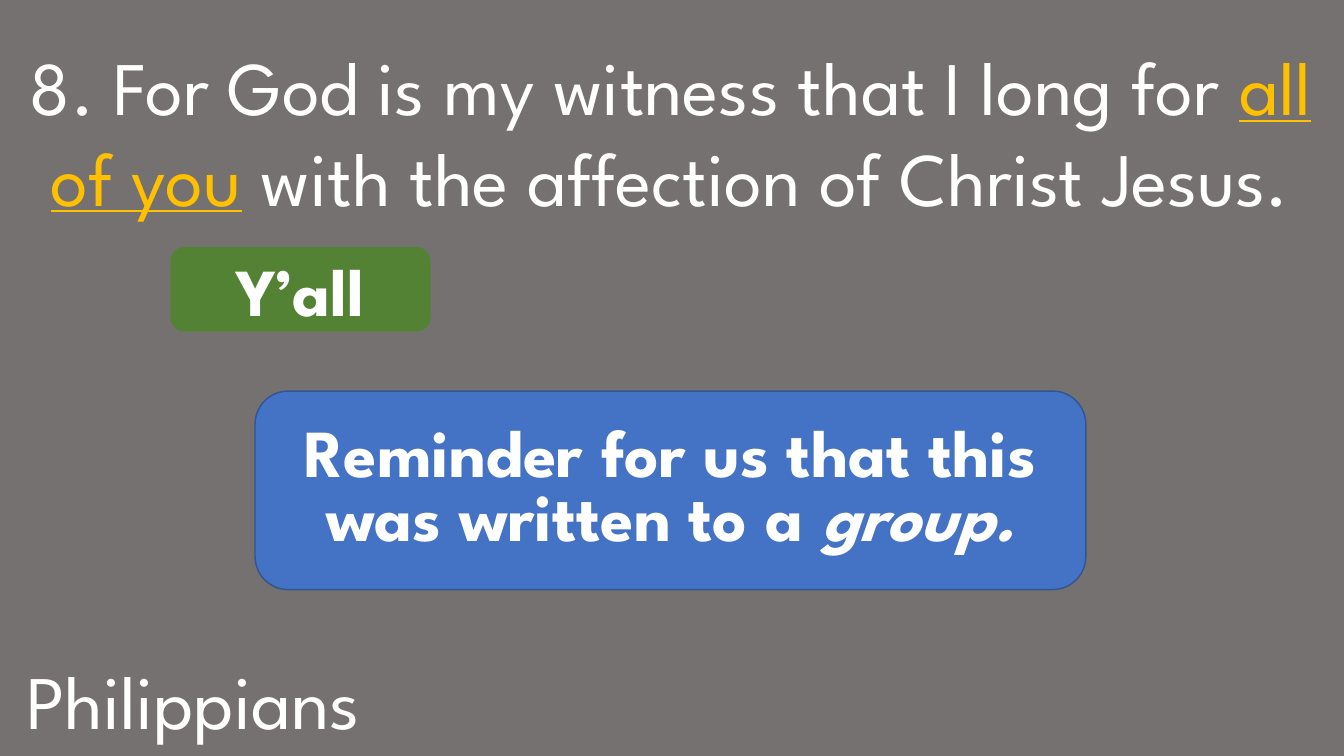
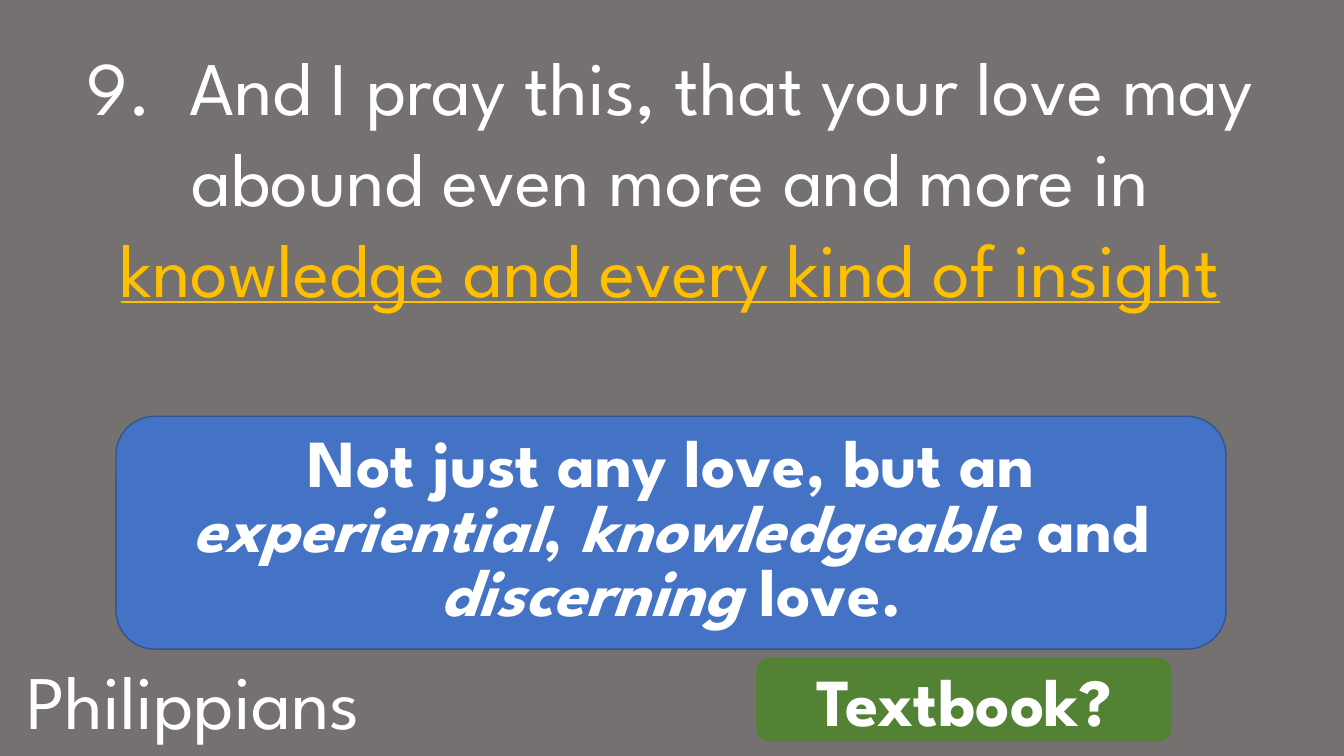
from pptx import Presentation
from pptx.dml.color import RGBColor
from pptx.enum.shapes import MSO_SHAPE
from pptx.enum.text import MSO_ANCHOR, MSO_AUTO_SIZE, PP_ALIGN
from pptx.util import Inches, Pt

ROUNDED = MSO_SHAPE.ROUNDED_RECTANGLE
MIDDLE = MSO_ANCHOR.MIDDLE
GROW = MSO_AUTO_SIZE.SHAPE_TO_FIT_TEXT
LEFT, CENTER = PP_ALIGN.LEFT, PP_ALIGN.CENTER

GRAY, WHITE, GOLD = "767171", "FFFFFF", "FFC000"
BLUE, NAVY, GREEN = "4472C4", "325491", "548235"

BODY = {"name": "League Spartan", "size": Pt(54)}
STRONG = {"name": "League Spartan", "size": Pt(48), "bold": True}
KEY = {"color": GOLD, "underline": True}
ITALIC = {"italic": True}

MARGIN = 0.16
VERSE_WIDTH = 12.98


def rgb(value):
    return RGBColor.from_string(value)


def write(tf, runs, base, align, spacing=None):
    tf.word_wrap = True
    p = tf.paragraphs[0]
    p.alignment = align
    p.line_spacing = spacing
    for text, extra in runs:
        r = p.add_run()
        r.text = text
        style = {"color": WHITE, **base, **extra}
        r.font.color.rgb = rgb(style.pop("color"))
        for name, value in style.items():
            setattr(r.font, name, value)


def add_text(s, box, runs, align):
    tf = s.shapes.add_textbox(*map(Inches, box)).text_frame
    write(tf, runs, BODY, align)
    tf.auto_size = GROW


def add_box(s, box, runs, fill, line=None, spacing=None):
    sp = s.shapes.add_shape(ROUNDED, *map(Inches, box))
    sp.shadow.inherit = False
    sp.fill.solid()
    sp.fill.fore_color.rgb = rgb(fill)
    if line:
        sp.line.color.rgb = rgb(line)
        sp.line.width = Pt(1)
    else:
        sp.line.fill.background()
    tf = sp.text_frame
    tf.vertical_anchor = MIDDLE
    write(tf, runs, STRONG, CENTER, spacing)


def add_callout(s, box, runs):
    add_box(s, box, runs, BLUE, NAVY, 0.8)


def add_tag(s, left, top, width, text):
    add_box(s, (left, top, width, 0.84), [(text, {})], GREEN)


def add_verse_slide(prs, verse, height):
    s = prs.slides.add_slide(prs.slide_layouts[6])
    add_text(s, (MARGIN, 6.44, 5.64, 1.01), [("Philippians", {})], LEFT)
    add_text(s, (MARGIN, 0.35, VERSE_WIDTH, height), verse, CENTER)
    return s


def main():
    prs = Presentation()
    prs.slide_width, prs.slide_height = Inches(13.33), Inches(7.5)
    background = prs.slide_master.background.fill
    background.solid()
    background.fore_color.rgb = rgb(GRAY)

    s = add_verse_slide(prs, [
        ("8. For God is my witness that I long for ", {}),
        ("all of you", KEY),
        (" with the affection of Christ Jesus.", {}),
    ], 2.83)
    add_callout(s, (2.53, 3.88, 8.24, 1.97), [
        ("Reminder for us that this was written to a ", {}),
        ("group.", ITALIC),
    ])
    add_tag(s, 1.69, 2.45, 2.58, "Y’all")

    s = add_verse_slide(prs, [
        ("9.  And I pray this, that your love may abound even more and more in ", {}),
        ("knowledge and every kind of insight", KEY),
    ], 3.74)
    add_callout(s, (1.15, 4.13, 11.01, 2.31), [
        ("Not just any love, but an ", {}),
        ("experiential", ITALIC),
        (", ", {}),
        ("knowledgeable", ITALIC),
        (" and ", {}),
        ("discerning", ITALIC),
        (" love.", {}),
    ])
    add_tag(s, 7.5, 6.52, 4.12, "Textbook?")

    prs.save("out.pptx")


if __name__ == "__main__":
    main()
